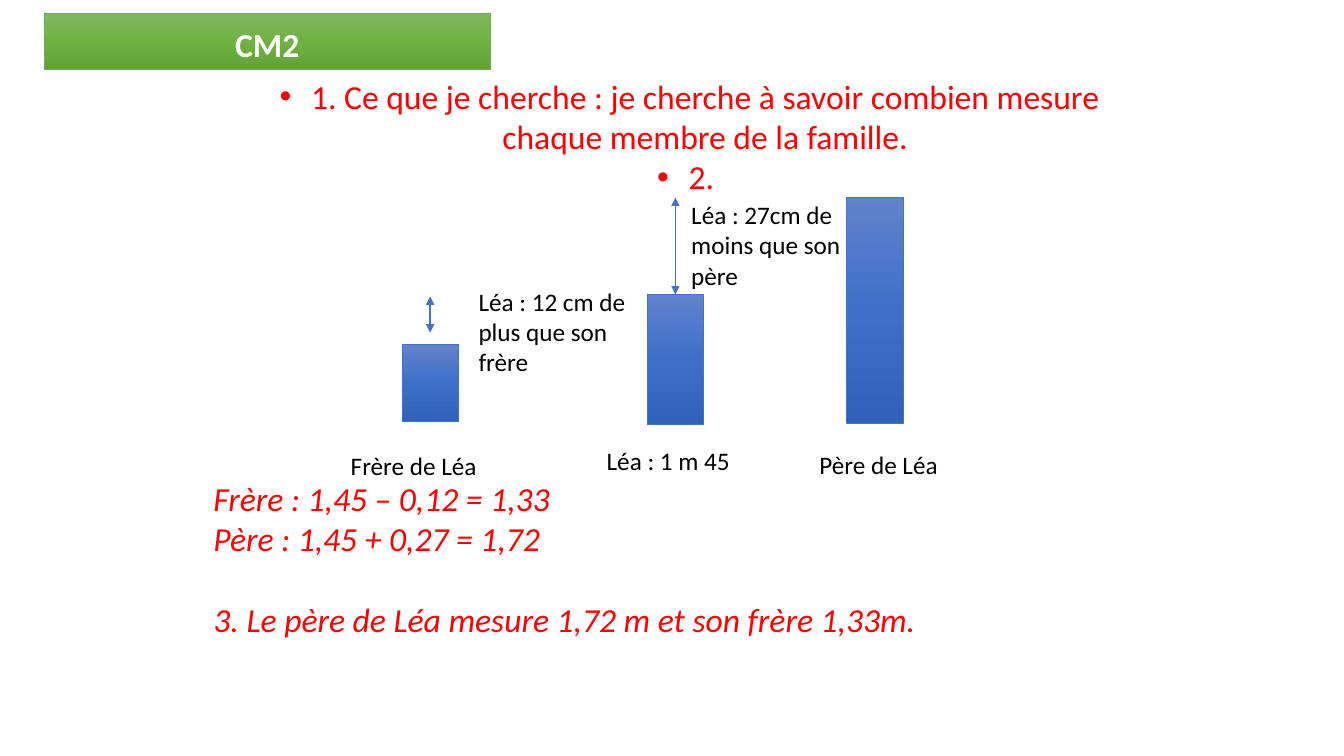
from copy import deepcopy
from dataclasses import dataclass

from lxml import etree
from pptx import Presentation
from pptx.dml.color import RGBColor
from pptx.enum import shapes, text
from pptx.oxml import ns
from pptx.util import Cm, Pt


@dataclass(frozen=True)
class Theme:
    font: str = "Calibri"
    large: int = 24
    small: int = 18
    answer: str = "FF0000"
    label: str = "000000"
    heading: str = "FFFFFF"
    green: tuple = ("81B861", "6FB242", "62A336")
    green_line: str = "70AD47"
    blue: tuple = ("6183CB", "3E70CA", "3062BB")
    blue_line: str = "4472C4"


THEME = Theme()


def place(s, x, y, w, h):
    s.left, s.top, s.width, s.height = Cm(x), Cm(y), Cm(w), Cm(h)


def add_run(p, words, size, color, bold=False, italic=False):
    r = p.add_run()
    r.text = words
    r.font.name, r.font.size = THEME.font, Pt(size)
    r.font.bold, r.font.italic = bold, italic
    r.font.color.rgb = RGBColor.from_string(color)


def next_paragraph(tf, i):
    return tf.add_paragraph() if i else tf.paragraphs[0]


def paint(s, colors, line):
    """Fill with a three-stop vertical gradient and draw a thin outline."""
    s.fill.gradient()
    s.fill.gradient_angle = 270
    stops = s._element.spPr.find(".//" + ns.qn("a:gsLst"))
    stops.insert(1, deepcopy(stops[0]))
    for stop, position, color in zip(s.fill.gradient_stops, (0, 0.5, 1), colors):
        stop.position = position
        stop.color.rgb = RGBColor.from_string(color)
    s.line.color.rgb = RGBColor.from_string(line)
    s.line.width = Pt(0.5)


def add_text(slide, x, y, w, h):
    tf = slide.shapes.add_textbox(Cm(x), Cm(y), Cm(w), Cm(h)).text_frame
    tf.word_wrap = True
    return tf


def add_label(slide, x, y, w, h, words):
    p = add_text(slide, x, y, w, h).paragraphs[0]
    add_run(p, words, THEME.small, THEME.label)


def add_bar(slide, x, y, w, h):
    bar = slide.shapes.add_shape(shapes.MSO_SHAPE.RECTANGLE, Cm(x), Cm(y), Cm(w), Cm(h))
    bar.shadow.inherit = False
    paint(bar, THEME.blue, THEME.blue_line)
    return bar


def add_double_arrow(slide, x, top, bottom):
    arrow = slide.shapes.add_connector(
        shapes.MSO_CONNECTOR.STRAIGHT, Cm(x), Cm(top), Cm(x), Cm(bottom))
    arrow.line.color.rgb = RGBColor.from_string(THEME.blue_line)
    arrow.line.width = Pt(1)
    ln = arrow.line._get_or_add_ln()
    for end in ("a:headEnd", "a:tailEnd"):
        etree.SubElement(ln, ns.qn(end), type="triangle")
    etree.SubElement(arrow._element.spPr, ns.qn("a:effectLst"))
    return arrow


def add_heading(slide, x, y, w, h):
    title = slide.shapes.title
    place(title, x, y, w, h)
    paint(title, THEME.green, THEME.green_line)
    tf = title.text_frame
    tf.auto_size = text.MSO_AUTO_SIZE.NONE
    tf.vertical_anchor = text.MSO_ANCHOR.BOTTOM
    p = tf.paragraphs[0]
    p.alignment, p.space_before = text.PP_ALIGN.CENTER, Pt(4.8)
    add_run(p, "CM2", THEME.large, THEME.heading, bold=True)


def add_question(slide, x, y, w, h):
    body = slide.placeholders[1]
    place(body, x, y, w, h)
    tf = body.text_frame
    tf.auto_size = text.MSO_AUTO_SIZE.NONE
    steps = ("1. Ce que je cherche : je cherche à savoir combien mesure "
             "chaque membre de la famille.", "2. ")
    for i, words in enumerate(steps):
        p = next_paragraph(tf, i)
        p.alignment, p.space_before = text.PP_ALIGN.CENTER, Pt(0)
        pPr = p._p.get_or_add_pPr()
        pPr.set("marL", str(Cm(0.79)))
        pPr.set("indent", str(-Cm(0.79)))
        etree.SubElement(pPr, ns.qn("a:buFont"), typeface="Arial")
        etree.SubElement(pPr, ns.qn("a:buChar"), char="•")
        add_run(p, words, THEME.large, THEME.answer)


def add_diagram(slide, x, y):
    """Compare the three heights with bars, captions and double arrows."""
    bar_w, caption_w, note_h = 1.42, 4.3, 2.57
    # name: bar left, top, height; caption left, top
    family = {
        "Frère de Léa": (1.54, 3.79, 1.93, 0, 6.33),
        "Léa : 1 m 45": (7.72, 2.52, 3.28, 6.45, 6.2),
        "Père de Léa": (12.75, 0.08, 5.69, 11.81, 6.3),
    }
    bars = []
    for caption, (left, top, height, cap_left, cap_top) in family.items():
        bars.append(add_bar(slide, x + left, y + top, bar_w, height))
        add_label(slide, x + cap_left, y + cap_top, caption_w, 1.03, caption)
    brother, lea, father = bars

    add_label(slide, x + 3.22, y + 2.19, 4.7, note_h, "Léa : 12 cm de plus que son frère")
    add_label(slide, x + 8.58, y, 5.38, note_h, "Léa : 27cm de moins que son père")

    middle = bar_w / 2
    add_double_arrow(slide, brother.left.cm + middle, y + 2.57, y + 3.48)
    to_father = add_double_arrow(slide, lea.left.cm + middle, father.top.cm, lea.top.cm)
    to_father.end_connect(lea, 0)


def add_answer(slide, x, y, w, h):
    tf = add_text(slide, x, y, w, h)
    lines = (
        ("Frère : 1,45 – 0,12 = 1,33", 0),
        ("Père : 1,45 + 0,27 = 1,72", 0),
        ("3. Le père de Léa mesure 1,72 m et son frère 1,33m.", 29),
    )
    for i, (words, gap) in enumerate(lines):
        p = next_paragraph(tf, i)
        p.space_before = Pt(gap)
        add_run(p, words, THEME.large, THEME.answer, italic=True)


def main():
    prs = Presentation()
    prs.slide_width, prs.slide_height = Cm(33.87), Cm(19.05)
    slide = prs.slides.add_slide(prs.slide_layouts[1])
    add_heading(slide, 1.12, 0.33, 11.23, 1.42)
    add_question(slide, 6.73, 1.78, 21.29, 8.46)
    add_answer(slide, 5.13, 11.91, 24.1, 4.37)
    add_diagram(slide, 8.59, 4.9)
    prs.save("out.pptx")


if __name__ == "__main__":
    main()
